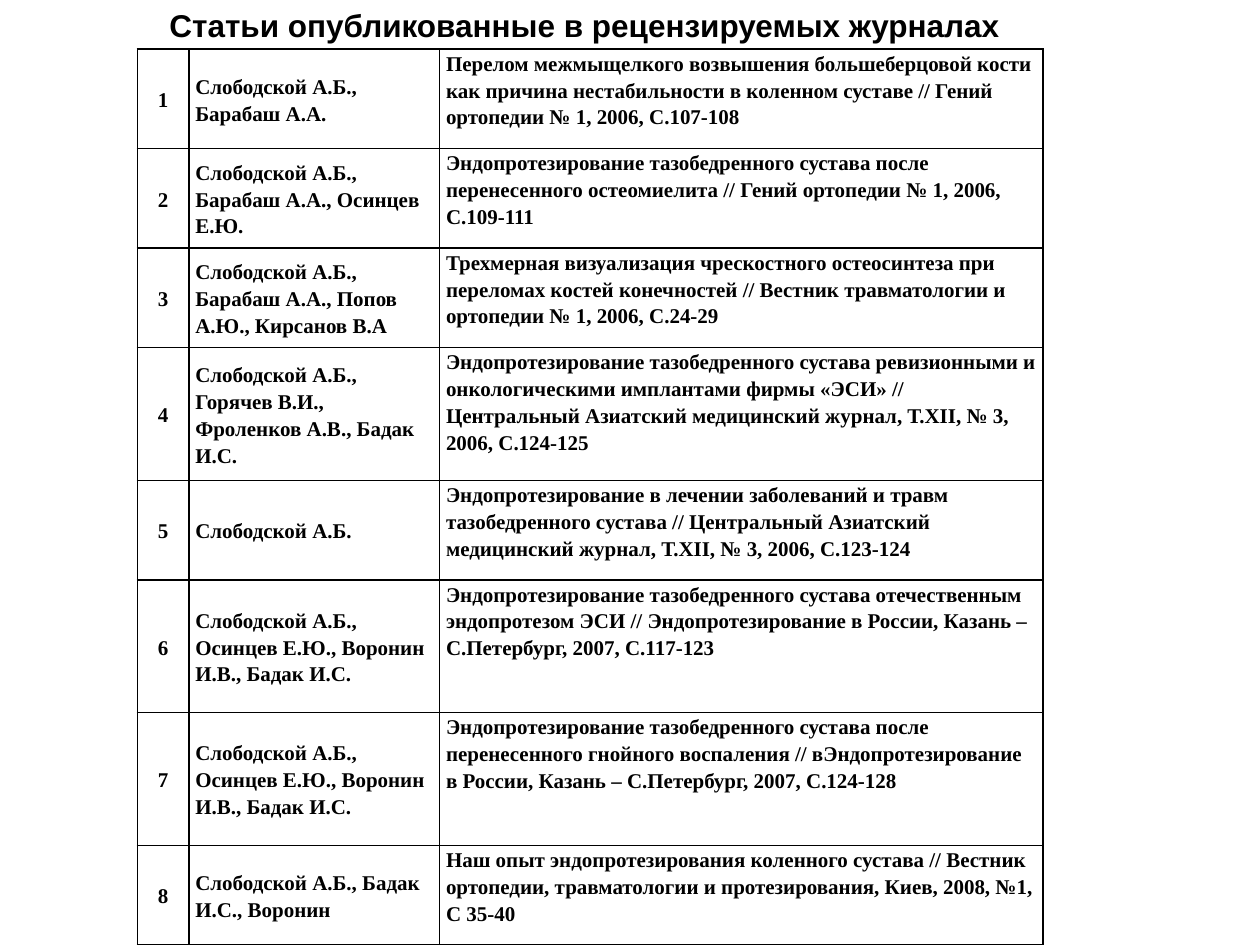
from lxml.etree import SubElement
from pptx import Presentation
from pptx.dml.color import RGBColor
from pptx.enum.text import MSO_ANCHOR, MSO_AUTO_SIZE, PP_ALIGN
from pptx.oxml.ns import qn
from pptx.util import Inches, Pt

WIDTH, HEIGHT = 10, 7.5
BLACK = "000000"
TITLE = "Статьи опубликованные в рецензируемых журналах"
TABLE_LEFT, TABLE_TOP = 1.09, 0.39
COLUMNS = [0.41, 1.99, 4.79]
ARTICLES = [
    (3, ["Слободской А.Б., Барабаш А.А."],
     "Перелом межмыщелкого возвышения большеберцовой кости как причина "
     "нестабильности в коленном суставе // Гений ортопедии № 1, 2006, С.107-108"),
    (3, ["Слободской А.Б., Барабаш А.А., Осинцев Е.Ю."],
     "Эндопротезирование тазобедренного сустава после перенесенного "
     "остеомиелита // Гений ортопедии № 1, 2006, С.109-111"),
    (3, ["Слободской А.Б., Барабаш А.А., Попов А.Ю., Кирсанов В.А"],
     "Трехмерная визуализация чрескостного остеосинтеза при переломах костей "
     "конечностей // Вестник травматологии и ортопедии № 1, 2006, С.24-29"),
    (4, ["Слободской А.Б.,", "Горячев В.И., Фроленков А.В., Бадак И.С."],
     "Эндопротезирование тазобедренного сустава ревизионными и онкологическими "
     "имплантами фирмы «ЭСИ» // Центральный Азиатский медицинский журнал, "
     "Т.XII, № 3, 2006, С.124-125"),
    (3, ["Слободской А.Б."],
     "Эндопротезирование в лечении заболеваний и травм тазобедренного сустава "
     "// Центральный Азиатский медицинский журнал, Т.XII, № 3, 2006, С.123-124"),
    (4, ["Слободской А.Б., Осинцев Е.Ю., Воронин И.В., Бадак И.С."],
     "Эндопротезирование тазобедренного сустава отечественным эндопротезом ЭСИ "
     "// Эндопротезирование в России, Казань – С.Петербург, 2007, С.117-123"),
    (4, ["Слободской А.Б., Осинцев Е.Ю., Воронин И.В., Бадак И.С."],
     "Эндопротезирование тазобедренного сустава после перенесенного гнойного "
     "воспаления // вЭндопротезирование в России, Казань – С.Петербург, 2007, "
     "С.124-128"),
    (3, ["Слободской А.Б., Бадак И.С., Воронин"],
     "Наш опыт эндопротезирования коленного сустава // Вестник ортопедии, "
     "травматологии и протезирования, Киев, 2008, №1, С 35-40"),
]


def color(code):
    return RGBColor.from_string(code)


def add_span(para, text, size, face):
    span = para.add_run()
    span.text = text
    span.font.size = Pt(size)
    span.font.name = face
    span.font.bold = True
    span.font.color.rgb = color(BLACK)


def add_title(page):
    box = page.shapes.add_textbox(Inches(1.21), 0, Inches(6.86), Inches(0.4))
    frame = box.text_frame
    frame.word_wrap = False
    frame.auto_size = MSO_AUTO_SIZE.SHAPE_TO_FIT_TEXT
    para = frame.paragraphs[0]
    para.alignment = PP_ALIGN.CENTER
    add_span(para, TITLE, 18, "Arial")


def add_borders(cell):
    properties = cell._tc.get_or_add_tcPr()
    for side in ("lnL", "lnR", "lnT", "lnB"):
        line = SubElement(properties, qn(f"a:{side}"), w=str(Pt(1)))
        fill = SubElement(line, qn("a:solidFill"))
        SubElement(fill, qn("a:srgbClr"), val=BLACK)


def fill_cell(cell, lines, alignment, anchor):
    cell.margin_left = cell.margin_right = Inches(0.05)
    cell.margin_top = cell.margin_bottom = 0
    cell.vertical_anchor = anchor
    add_borders(cell)
    cell.fill.background()
    frame = cell.text_frame
    for index, text in enumerate(lines):
        para = frame.add_paragraph() if index else frame.paragraphs[0]
        para.alignment = alignment
        para.line_spacing = 1.15
        add_span(para, text, 12, "Times New Roman")


def add_articles(page):
    height = HEIGHT - TABLE_TOP
    line_height = height / sum(lines for lines, _, _ in ARTICLES)
    table = page.shapes.add_table(
        len(ARTICLES), len(COLUMNS), Inches(TABLE_LEFT), Inches(TABLE_TOP),
        Inches(sum(COLUMNS)), Inches(height)).table
    table.first_row = table.horz_banding = False
    for column, width in zip(table.columns, COLUMNS):
        column.width = Inches(width)
    for index, (lines, authors, reference) in enumerate(ARTICLES):
        row = table.rows[index]
        row.height = Inches(lines * line_height)
        number, names, source = row.cells
        fill_cell(number, [str(index + 1)], PP_ALIGN.CENTER, MSO_ANCHOR.MIDDLE)
        fill_cell(names, authors, PP_ALIGN.LEFT, MSO_ANCHOR.MIDDLE)
        fill_cell(source, [reference], PP_ALIGN.LEFT, MSO_ANCHOR.TOP)


def main():
    deck = Presentation()
    deck.slide_width, deck.slide_height = Inches(WIDTH), Inches(HEIGHT)
    page = deck.slides.add_slide(deck.slide_layouts[6])
    add_title(page)
    add_articles(page)
    deck.save("out.pptx")


if __name__ == "__main__":
    main()
